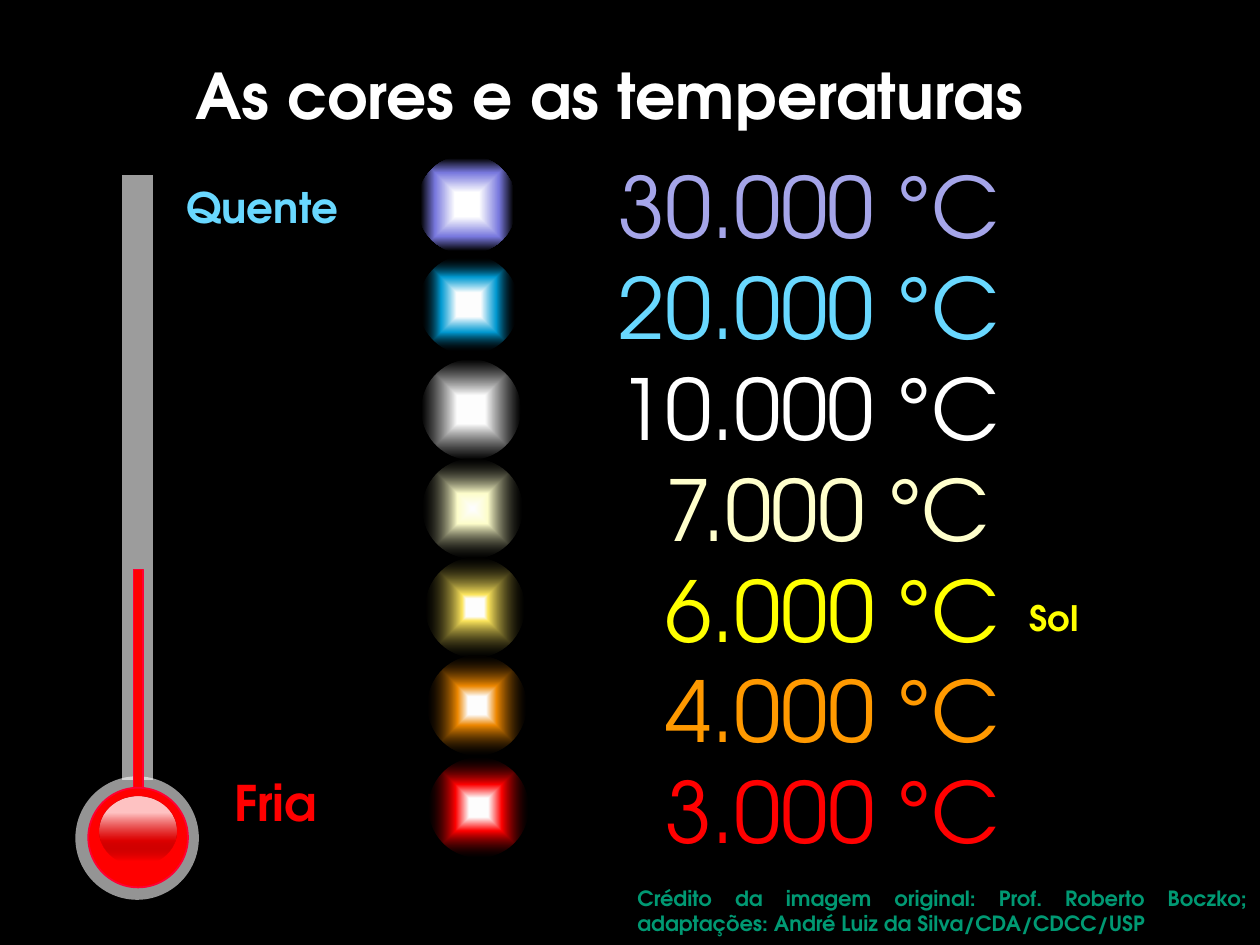
"""Build a slide that pairs star colours with their temperatures."""
from dataclasses import dataclass

from lxml import etree
from pptx import Presentation
from pptx.dml.color import RGBColor
from pptx.enum.shapes import MSO_SHAPE
from pptx.enum.text import MSO_ANCHOR, MSO_AUTO_SIZE, PP_ALIGN
from pptx.oxml.ns import qn
from pptx.util import Cm, Pt

RECT, OVAL = MSO_SHAPE.RECTANGLE, MSO_SHAPE.OVAL
LEFT, MID, JUST = PP_ALIGN.LEFT, PP_ALIGN.CENTER, PP_ALIGN.JUSTIFY
FONT = "TeX Gyre Adventor"
SIZE = 2.01
INK = {
    "black": "000000", "white": "FFFFFF", "red": "FF0000", "rim": "FF0033",
    "lilac": "A5A5E9", "sky": "69D8FF", "cream": "FFFFCC", "sun": "FFFF00",
    "amber": "FF9900", "violet": "7878DE", "blue": "00B0F0", "gold": "FDE65D",
    "rust": "EE8800", "wine": "C00000", "green": "009973",
}


@dataclass
class Stop:
    pos: int
    ink: str
    alpha: int = 100


@dataclass
class Star:
    label: str
    ink: str
    top: float
    stops: list[Stop]
    indent: float = 0


@dataclass
class Part:
    kind: int
    box: tuple
    ink: str
    alpha: int = 100
    rim: str = ""


@dataclass
class Note:
    text: str
    box: tuple
    size: int
    ink: str
    align: int = LEFT
    wrap: bool = False


STARS = [
    Star("30.000 °C", "lilac", 3.12,
         [Stop(24, "white"), Stop(64, "violet"), Stop(93, "black")]),
    Star("20.000 °C", "sky", 5.13,
         [Stop(24, "white"), Stop(55, "blue", 87), Stop(93, "black", 18)]),
    Star("10.000 °C", "white", 7.26,
         [Stop(25, "white"), Stop(28, "white"), Stop(100, "black", 73)]),
    Star("7.000 °C", "cream", 9.25,
         [Stop(3, "white"), Stop(30, "cream"), Stop(100, "black", 23)], 0.94),
    Star("6.000 °C", "sun", 11.25,
         [Stop(18, "white"), Stop(26, "gold"), Stop(100, "black", 23)], 0.94),
    Star("4.000 °C", "amber", 13.21,
         [Stop(18, "white"), Stop(39, "rust"), Stop(100, "black", 23)], 0.94),
    Star("3.000 °C", "red", 15.27,
         [Stop(19, "white"), Stop(46, "red"), Stop(100, "black", 23)], 0.94),
]
PARTS = [
    Part(RECT, (2.44, 3.51, 0.66, 12.24), "white", 61, "black"),
    Part(OVAL, (1.52, 15.65, 2.49, 2.49), "white", 58),
    Part(RECT, (2.69, 11.48, 0.2, 4.7), "red", rim="rim"),
    Part(OVAL, (1.78, 15.88, SIZE, SIZE), "red", rim="rim"),
]
GLOSS = [Stop(24, "white", 76), Stop(64, "wine", 54), Stop(93, "black", 0)]
NOTES = [
    Note("Fria", (4.47, 15.44, 2.21, 1.45), 28, "red"),
    Note("Quente", (3.51, 3.53, 3.61, 1.3), 24, "sky"),
    Note("Sol", (20.5, 11.91, 1.5, 1.12), 20, "sun", MID),
    Note("Crédito da imagem original: Prof. Roberto Boczko; "
         "adaptações: André Luiz da Silva/CDA/CDCC/USP",
         (12.6, 17.73, 12.8, 1.27), 12, "green", JUST, True),
]


def tint(ink: str) -> RGBColor:
    return RGBColor.from_string(INK[ink])


def write(para, text: str, *, size: int, ink: str, bold: bool = True,
          align: int = LEFT, indent: float = 0) -> None:
    para.alignment = align
    if indent:
        para._p.get_or_add_pPr().set("marL", str(Cm(indent)))
    run = para.add_run()
    run.text = text
    font = run.font
    font.name, font.size, font.bold = FONT, Pt(size), bold
    font.color.rgb = tint(ink)


def add_box(slide, box: tuple, wrap: bool):
    frame = slide.shapes.add_textbox(*map(Cm, box)).text_frame
    frame.word_wrap = wrap
    return frame


def add_shape(slide, kind: int, box: tuple):
    shape = slide.shapes.add_shape(kind, *map(Cm, box))
    shape.shadow.inherit = False
    shape.line.fill.background()
    return shape


def add_alpha(node, alpha: int) -> None:
    if alpha < 100:
        etree.SubElement(node, qn("a:alpha")).set("val", str(alpha * 1000))


def add_part(slide, part: Part) -> None:
    shape = add_shape(slide, part.kind, part.box)
    shape.fill.solid()
    shape.fill.fore_color.rgb = tint(part.ink)
    add_alpha(shape._element.spPr.find(qn("a:solidFill"))[0], part.alpha)
    if part.rim:
        shape.line.color.rgb = tint(part.rim)
        shape.line.width = Pt(1)


def add_glow(slide, box: tuple, stops: list[Stop], radial: bool) -> None:
    shape = add_shape(slide, OVAL, box)
    shape.fill.background()
    props = shape._element.spPr
    grad = etree.Element(qn("a:gradFill"), rotWithShape="1")
    props.replace(props.find(qn("a:noFill")), grad)
    items = etree.SubElement(grad, qn("a:gsLst"))
    for stop in stops:
        item = etree.SubElement(items, qn("a:gs"), pos=str(stop.pos * 1000))
        node = etree.SubElement(item, qn("a:srgbClr"), val=INK[stop.ink])
        add_alpha(node, stop.alpha)
    if radial:
        path = etree.SubElement(grad, qn("a:path"), path="shape")
        etree.SubElement(path, qn("a:fillToRect"), l="50000", t="50000",
                         r="50000", b="50000")
    else:
        etree.SubElement(grad, qn("a:lin"), ang="5400000", scaled="0")


def add_title(slide) -> None:
    title = slide.shapes.title
    title.left, title.top, title.width, title.height = map(
        Cm, (0, 0.74, 24.56, 2.34))
    frame = title.text_frame
    frame.auto_size = MSO_AUTO_SIZE.NONE
    frame.vertical_anchor = MSO_ANCHOR.MIDDLE
    write(frame.paragraphs[0], "As cores e as temperaturas",
          size=36, ink="white", align=MID)


def main() -> None:
    deck = Presentation()
    deck.slide_width, deck.slide_height = Cm(25.4), Cm(19.05)
    slide = deck.slides.add_slide(deck.slide_layouts[5])
    back = slide.background.fill
    back.solid()
    back.fore_color.rgb = tint("black")
    add_title(slide)
    scale = add_box(slide, (12.22, 3, 8.43, 14.63), True)
    for row, star in enumerate(STARS):
        para = scale.add_paragraph() if row else scale.paragraphs[0]
        write(para, star.label, size=48, ink=star.ink, bold=False,
              indent=star.indent)
        add_glow(slide, (8.41 + 0.04 * row, star.top, SIZE, SIZE),
                 star.stops, True)
    for part in PARTS:
        add_part(slide, part)
    add_glow(slide, (2.01, 16.05, 1.55, 1.4), GLOSS, False)
    for note in NOTES:
        frame = add_box(slide, note.box, note.wrap)
        write(frame.paragraphs[0], note.text, size=note.size, ink=note.ink,
              align=note.align)
    deck.save("out.pptx")


if __name__ == "__main__":
    main()
